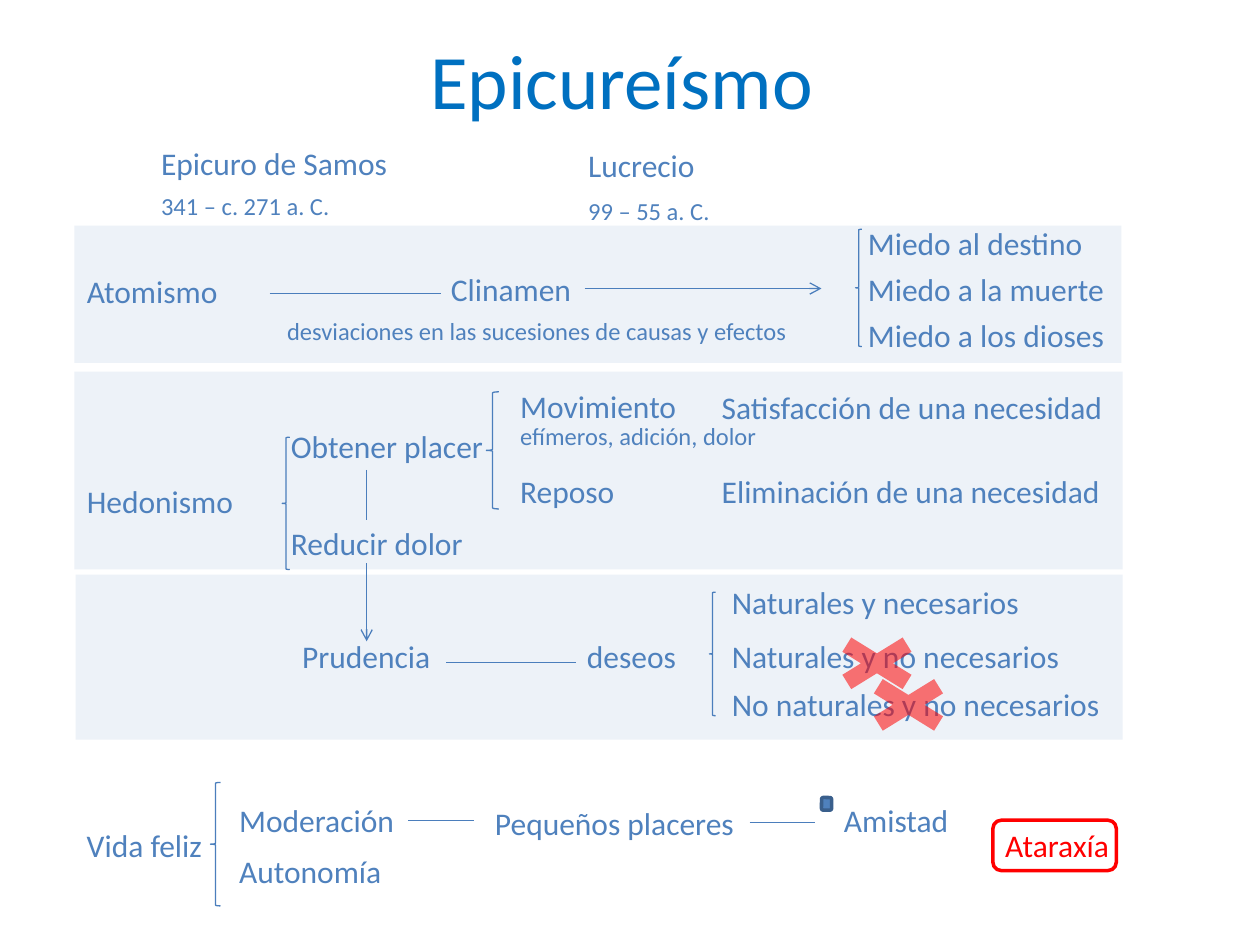
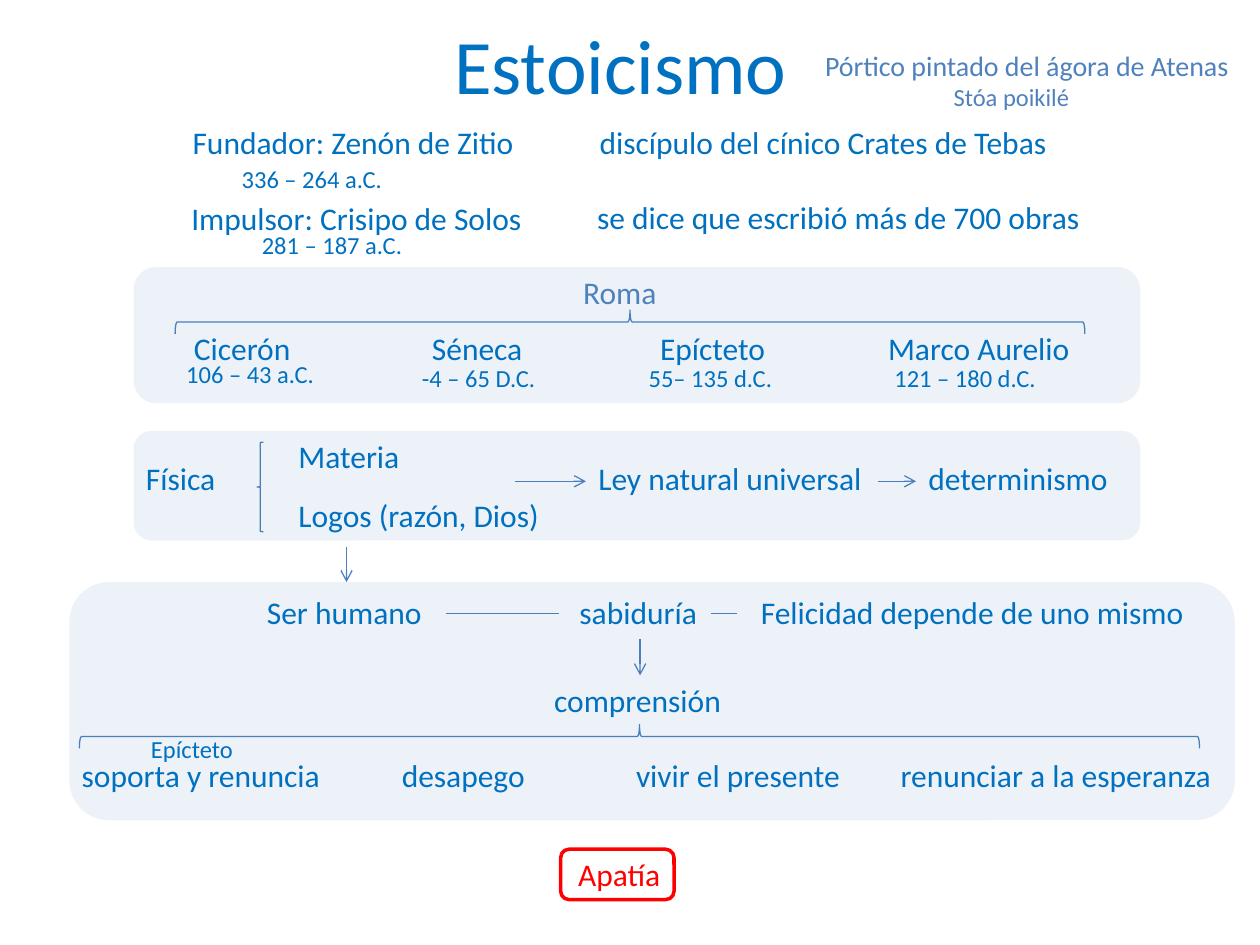
from lxml.etree import SubElement as Sub
from pptx import Presentation
from pptx.dml.color import RGBColor
from pptx.enum.shapes import MSO_CONNECTOR as Link, MSO_SHAPE as Kind
from pptx.enum.text import MSO_ANCHOR as Anchor, MSO_AUTO_SIZE as Fit, PP_ALIGN as Align
from pptx.oxml.ns import qn
from pptx.util import Inches, Pt

FONT = "Calibri"
BLUE = RGBColor(0x4F, 0x81, 0xBD)
DEEP = RGBColor(0x00, 0x70, 0xC0)
EDGE = RGBColor(0x4B, 0x7E, 0xBC)
DARK = RGBColor(0x3A, 0x5F, 0x8C)
RED = RGBColor(0xFF, 0x00, 0x00)

EPICURUS = {
    "title": ("Epicureísmo", 3.21, 0.19),
    "band": Kind.RECTANGLE,
    "bands": [(0.59, 1.79, 8.31, 1.09), (0.59, 2.95, 8.32, 1.57), (0.6, 4.56, 8.31, 1.31)],
    "texts": [
        (18, BLUE, [
            ("Epicuro de Samos", 1.18, 1.09, 2.02),
            ("Lucrecio", 4.57, 1.11, 1.06),
            ("Atomismo", 0.59, 2.11, 1.25),
            ("Clinamen", 3.48, 2.09, 1.17),
            ("Miedo al destino", 6.79, 1.73, 1.93),
            ("Miedo a la muerte", 6.79, 2.09, 2.1),
            ("Miedo a los dioses", 6.79, 2.46, 2.1),
            ("Hedonismo", 0.59, 3.78, 1.38),
            ("Obtener placer", 2.21, 3.34, 1.75),
            ("Reducir dolor", 2.21, 4.11, 1.58),
            ("Movimiento", 4.03, 3.02, 1.45),
            ("Reposo", 4.03, 3.7, 0.96),
            ("Satisfacción de una necesidad", 5.63, 3.03, 3.26),
            ("Eliminación de una necesidad", 5.63, 3.7, 3.24),
            ("Prudencia", 2.3, 5.01, 1.23),
            ("deseos", 4.56, 5.01, 0.92),
            ("Naturales y necesarios", 5.71, 4.58, 2.5),
            ("Naturales y no necesarios", 5.71, 5.01, 2.83),
            ("No naturales y no necesarios", 5.71, 5.39, 3.15),
            ("Vida feliz", 0.59, 6.51, 1.13),
            ("Moderación", 1.8, 6.31, 1.44),
            ("Autonomía", 1.8, 6.71, 1.34),
            ("Pequeños placeres", 3.83, 6.33, 2.12),
            ("Amistad", 6.6, 6.31, 1.04),
        ]),
        (14, BLUE, [
            ("341 – c. 271 a. C.", 1.18, 1.47, 1.55),
            ("99 – 55 a. C.", 4.57, 1.51, 1.17),
            ("desviaciones en las sucesiones de causas y efectos", 2.18, 2.46, 4.21),
            ("efímeros, adición, dolor", 4.03, 3.29, 2.09),
        ]),
        (18, RED, [("Ataraxía", 7.88, 6.51, 1.03)]),
    ],
    "braces": [
        (6.79, 1.82, 0.05, 0.93), (2.24, 3.47, 0.06, 1.05), (3.86, 3.11, 0.1, 0.93),
        (5.63, 4.7, 0.05, 0.98), (1.67, 6.21, 0.08, 0.98),
    ],
    "lines": [
        (2.14, 2.33, 3.5, 2.33), (2.91, 3.73, 2.91, 4.13), (3.54, 5.26, 4.57, 5.26),
        (3.24, 6.51, 3.76, 6.51), (5.95, 6.53, 6.47, 6.53),
    ],
    "arrows": [(4.64, 2.29, 6.52, 2.29), (2.91, 4.47, 2.91, 5.09)],
    "crosses": [(6.75, 5.31, 0.92, 0.57), (6.5, 4.98, 0.92, 0.57)],
    "dots": [(6.52, 6.33, 0.08, 0.1)],
    "goal": (7.88, 6.51, 0.98, 0.4),
}

STOICS = {
    "title": ("Estoicismo", 3.2, 0.07),
    "band": Kind.ROUNDED_RECTANGLE,
    "bands": [(1.06, 2.12, 7.99, 1.08), (1.06, 3.42, 7.99, 0.87), (0.55, 4.62, 9.25, 1.89)],
    "texts": [
        (18, DEEP, [
            ("Fundador: Zenón de Zitio", 1.43, 0.93, 2.78),
            ("discípulo del cínico Crates de Tebas", 4.66, 0.93, 3.82),
            ("Impulsor: Crisipo de Solos", 1.42, 1.53, 2.85),
            ("se dice que escribió más de 700 obras", 4.64, 1.52, 4.1),
            ("Cicerón", 1.44, 2.56, 0.98),
            ("Séneca", 3.33, 2.56, 0.93),
            ("Epícteto", 5.14, 2.56, 1.04),
            ("Marco Aurelio", 6.95, 2.56, 1.66),
            ("Física", 1.06, 3.59, 0.76),
            ("Materia", 2.27, 3.42, 1.01),
            ("Logos (razón, Dios)", 2.27, 3.89, 2.13),
            ("Ley natural universal", 4.65, 3.59, 2.32),
            ("determinismo", 7.27, 3.59, 1.64),
            ("Ser humano", 2.02, 4.66, 1.44),
            ("sabiduría", 4.5, 4.66, 1.15),
            ("Felicidad depende de uno mismo", 5.94, 4.66, 3.6),
            ("comprensión", 4.3, 5.36, 1.54),
            ("soporta y renuncia", 0.55, 5.95, 2.13),
            ("desapego", 3.09, 5.95, 1.19),
            ("vivir el presente", 4.95, 5.95, 1.87),
            ("renunciar a la esperanza", 7.05, 5.95, 2.74),
        ]),
        (14, DEEP, [
            ("336 – 264 a.C.", 1.82, 1.25, 1.33),
            ("281 – 187 a.C.", 1.98, 1.78, 1.33),
            ("106 – 43 a.C.", 1.38, 2.8, 1.23),
            ("-4 – 65 D.C.", 3.25, 2.83, 1.11),
            ("55– 135 d.C.", 5.05, 2.83, 1.2),
            ("121 – 180 d.C.", 7, 2.83, 1.33),
            ("Epícteto", 1.1, 5.78, 0.86),
        ]),
        (16, BLUE, [("Pórtico pintado del ágora de Atenas", 6.45, 0.34, 3.45)]),
        (14, BLUE, [("Stóa poikilé", 7.47, 0.6, 1.13)]),
        (18, BLUE, [("Roma", 4.53, 2.12, 0.79)]),
        (18, RED, [("Apatía", 4.49, 6.74, 0.86)]),
    ],
    "braces": [(2.04, 3.51, 0.05, 0.71), (1.39, 2.46, 7.22, 0.19), (0.63, 5.75, 8.89, 0.19)],
    "lines": [(3.54, 4.87, 4.44, 4.87), (5.64, 4.87, 5.85, 4.87)],
    "arrows": [
        (4.09, 3.82, 4.65, 3.82), (6.97, 3.82, 7.27, 3.82),
        (2.75, 4.34, 2.75, 4.62), (5.08, 5.07, 5.08, 5.36),
    ],
    "crosses": [],
    "dots": [],
    "goal": (4.45, 6.74, 0.9, 0.4),
}


def write(frame, text, size, color):
    run = frame.paragraphs[0].add_run()
    run.text = text
    run.font.name = FONT
    run.font.size = Pt(size)
    run.font.color.rgb = color


def head(slide, text, left, top):
    title = slide.shapes.title
    title.left, title.top = Inches(left), Inches(top)
    title.width, title.height = Inches(3.45), Inches(0.87)
    frame = title.text_frame
    frame.vertical_anchor = Anchor.MIDDLE
    frame.paragraphs[0].alignment = Align.CENTER
    write(frame, text, 44, DEEP)


def label(slide, text, left, top, width, size, color):
    high = round(size * 1.2 / 72 + 0.1, 2)
    box = slide.shapes.add_textbox(*map(Inches, (left, top, width, high)))
    frame = box.text_frame
    frame.word_wrap = False
    frame.auto_size = Fit.SHAPE_TO_FIT_TEXT
    write(frame, text, size, color)


def form(slide, kind, spot, fill=None, alpha=100, edge=None, thick=0.75):
    shape = slide.shapes.add_shape(kind, *map(Inches, spot))
    shape.shadow.inherit = False
    if fill is None:
        shape.fill.background()
    else:
        shape.fill.solid()
        shape.fill.fore_color.rgb = fill
        if alpha < 100:
            tint = shape.fill._xPr.find(qn("a:solidFill"))[0]
            Sub(tint, qn("a:alpha"), val=str(alpha * 1000))
    if edge is None:
        shape.line.fill.background()
    else:
        shape.line.color.rgb = edge
        shape.line.width = Pt(thick)
    return shape


def brace(slide, left, top, width, high):
    flat = width > high
    if flat:
        left, top = left + (width - high) / 2, top + (high - width) / 2
        width, high = high, width
    shape = form(slide, Kind.LEFT_BRACE, (left, top, width, high), edge=EDGE)
    shape.rotation = 90 if flat else 0


def link(slide, ends, arrow):
    line = slide.shapes.add_connector(Link.STRAIGHT, *map(Inches, ends))
    line.line.color.rgb = EDGE
    line.line.width = Pt(0.75)
    if arrow:
        Sub(line.line._get_or_add_ln(), qn("a:tailEnd"), type="arrow")
    Sub(line._element.spPr, qn("a:effectLst"))


def build(deck, data):
    slide = deck.slides.add_slide(deck.slide_layouts[5])
    head(slide, *data["title"])
    for spot in data["bands"]:
        form(slide, data["band"], spot, BLUE, 10)
    for size, color, items in data["texts"]:
        for item in items:
            label(slide, *item, size, color)
    for spot in data["braces"]:
        brace(slide, *spot)
    for key in ("lines", "arrows"):
        for ends in data[key]:
            link(slide, ends, key == "arrows")
    for spot in data["crosses"]:
        form(slide, Kind.MATH_MULTIPLY, spot, RED, 54)
    for spot in data["dots"]:
        form(slide, Kind.ROUNDED_RECTANGLE, spot, BLUE, edge=DARK, thick=2)
    form(slide, Kind.ROUNDED_RECTANGLE, data["goal"], edge=RED, thick=2)


def main():
    deck = Presentation()
    deck.slide_width, deck.slide_height = Inches(10), Inches(7.5)
    for data in (EPICURUS, STOICS):
        build(deck, data)
    deck.save("out.pptx")


if __name__ == "__main__":
    main()
